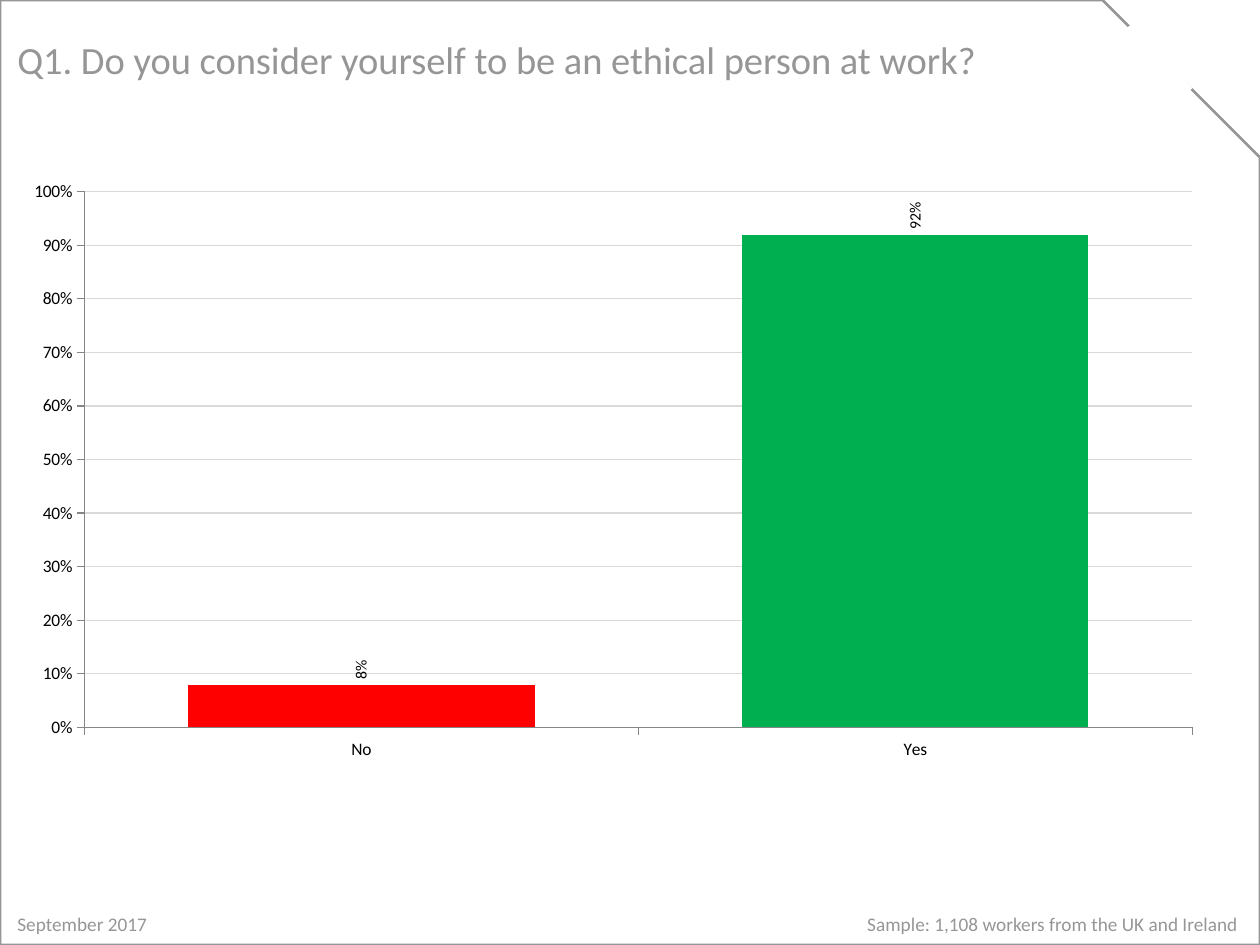
"""Builds the survey slide on ethics at work with its column chart."""
from lxml.etree import SubElement
from pptx import Presentation
from pptx.chart.data import CategoryChartData
from pptx.dml.color import RGBColor
from pptx.enum.chart import XL_CHART_TYPE, XL_LABEL_POSITION, XL_TICK_MARK
from pptx.enum.shapes import MSO_CONNECTOR, MSO_SHAPE
from pptx.enum.text import MSO_ANCHOR
from pptx.oxml import parse_xml
from pptx.oxml.ns import nsdecls, qn
from pptx.util import Cm, Pt

GREY = RGBColor(0x96, 0x96, 0x96)
WHITE = RGBColor(0xFF, 0xFF, 0xFF)
BLACK = RGBColor(0, 0, 0)
GRID = RGBColor(0xD9, 0xD9, 0xD9)
AXIS = RGBColor(0x86, 0x86, 0x86)
RED = RGBColor(0xFF, 0, 0)
GREEN = RGBColor(0, 0xB0, 0x50)


def style(font, size, color):
    font.name = "Calibri"
    font.size = Pt(size)
    font.color.rgb = color


def add_text(slide, text, size, left, top, width, height):
    box = slide.shapes.add_textbox(Cm(left), Cm(top), Cm(width), Cm(height))
    frame = box.text_frame
    frame.word_wrap = True
    frame.text = text
    style(frame.paragraphs[0].runs[0].font, size, GREY)
    return frame


deck = Presentation()
deck.slide_width = Cm(25.4)
deck.slide_height = Cm(19.05)
slide = deck.slides.add_slide(deck.slide_layouts[6])

foot = add_text(slide, "September 2017", 11, 0.1, 18.26, 25.25, 0.74)
para = foot.paragraphs[0]
tabs = SubElement(para._p.get_or_add_pPr(), qn("a:tabLst"))
SubElement(tabs, qn("a:tab"), pos=str(Cm(24.61)), algn="r")
run = para.add_run()
run.text = "\tSample: 1,108 workers from the UK and Ireland"
style(run.font, 11, GREY)

frame = slide.shapes.add_shape(
    MSO_SHAPE.SNIP_1_RECTANGLE, 0, 0, deck.slide_width, deck.slide_height)
frame.shadow.inherit = False
frame.fill.background()
frame.line.color.rgb = GREY
frame.line.width = Pt(1.5)

gap = slide.shapes.add_connector(
    MSO_CONNECTOR.STRAIGHT, Cm(22.78), Cm(0.51), Cm(23.98), Cm(1.83))
gap.line.color.rgb = WHITE
gap.line.width = Pt(4.5)
SubElement(gap._element.spPr, qn("a:effectLst"))

title = add_text(
    slide, "Q1. Do you consider yourself to be an ethical person at work?",
    22, 0.1, 0.41, 22.38, 1.7)
title.vertical_anchor = MSO_ANCHOR.MIDDLE
title.paragraphs[0].line_spacing = 0.9

data = CategoryChartData(number_format="0%")
data.categories = ["No", "Yes"]
data.add_series("Series 1", [0.08, 0.92])
chart = slide.shapes.add_chart(
    XL_CHART_TYPE.COLUMN_CLUSTERED,
    Cm(0.69), Cm(3.51), Cm(23.65), Cm(13.64), data).chart
chart.has_title = False
chart.has_legend = False
style(chart.font, 10, BLACK)

for axis in (chart.category_axis, chart.value_axis):
    axis.major_tick_mark = XL_TICK_MARK.OUTSIDE
    axis.minor_tick_mark = XL_TICK_MARK.NONE
    axis.format.line.color.rgb = AXIS
    axis.format.line.width = Pt(0.75)
    style(axis.tick_labels.font, 10, BLACK)

scale = chart.value_axis
scale.minimum_scale = 0
scale.maximum_scale = 1
scale.major_unit = 0.1
scale.tick_labels.number_format = "0%"
scale.tick_labels.number_format_is_linked = False
scale.has_major_gridlines = True
scale.major_gridlines.format.line.color.rgb = GRID
scale.major_gridlines.format.line.width = Pt(0.75)

plot = chart.plots[0]
plot.gap_width = 60
plot.vary_by_categories = False
bars = plot.series[0]
for spot, color in enumerate((RED, GREEN)):
    fill = bars.points[spot].format.fill
    fill.solid()
    fill.fore_color.rgb = color

labels = bars.data_labels
labels.show_value = True
labels.position = XL_LABEL_POSITION.OUTSIDE_END
labels.number_format = "0%"
labels.number_format_is_linked = False
style(labels.font, 9, BLACK)
body = labels._element.find(qn("c:txPr")).find(qn("a:bodyPr"))
body.set("rot", "-5400000")
body.set("vert", "horz")

area = chart.element.find(".//" + qn("c:plotArea"))
for old in area.findall(qn("c:layout")):
    area.remove(old)
place = "".join(
    f'<c:{tag} val="{val}"/>' for tag, val in (
        ("layoutTarget", "inner"), ("xMode", "edge"), ("yMode", "edge"),
        ("x", 0.037), ("y", 0.026), ("w", 0.95), ("h", 0.792)))
area.insert(0, parse_xml(
    f'<c:layout {nsdecls("c")}><c:manualLayout>{place}'
    "</c:manualLayout></c:layout>"))

deck.save("out.pptx")
